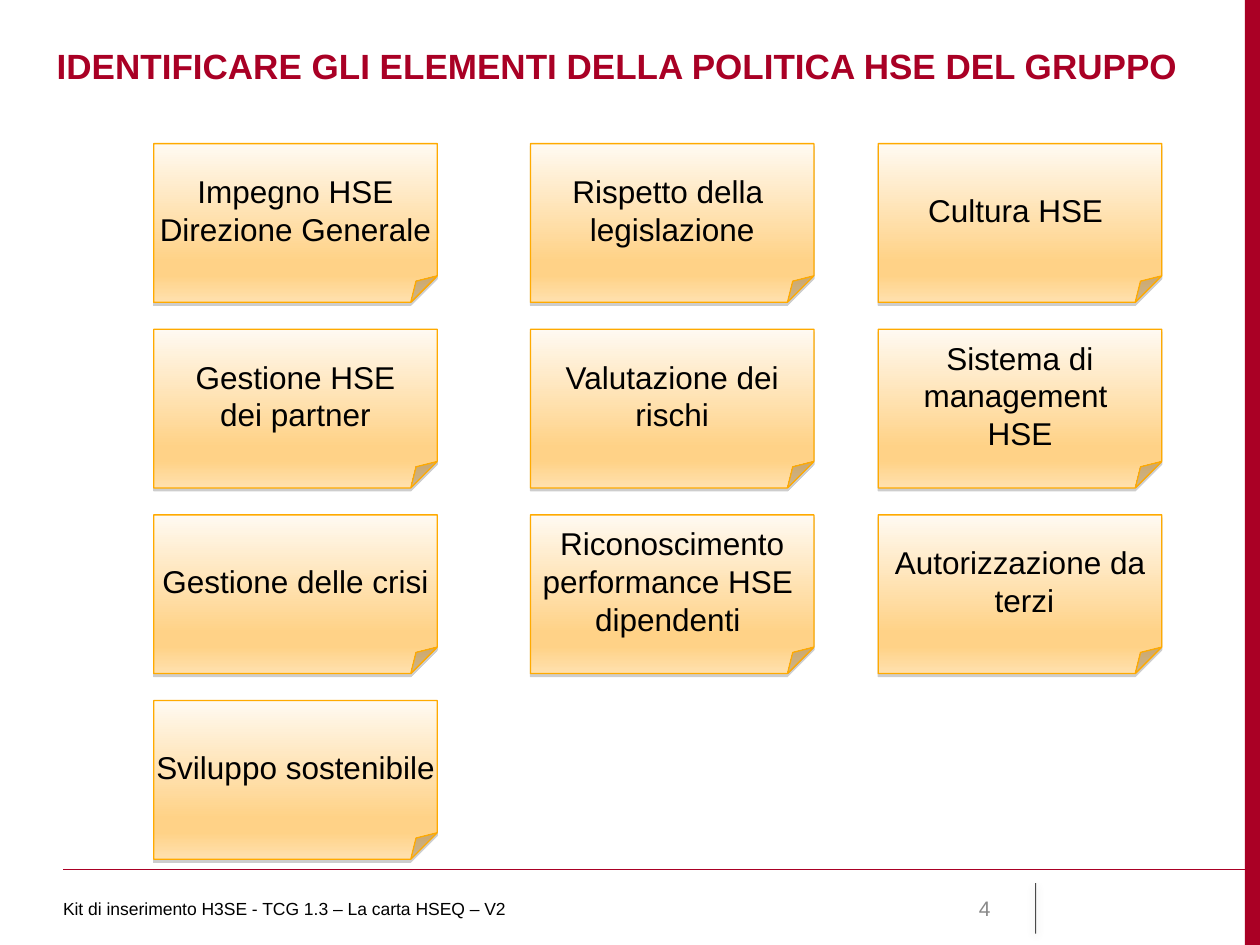
from dataclasses import dataclass

from lxml import etree
from pptx import Presentation
from pptx import util as u
from pptx.dml import color
from pptx.enum import shapes, text
from pptx.oxml import ns, parse_xml

COLORS = {
    "red": "AA0025",
    "title": "A90025",
    "amber": "FFAA00",
    "black": "000000",
    "grey": "898989",
    "shadow": "808080",
}
NOTE_GRADIENT = [(0, "FFFAF2"), (74, "FFD287"), (83, "FFD287"), (100, "FFE1AF")]
NOTE_WIDTH, NOTE_HEIGHT = 2.25, 1.26
COLUMN_LEFTS = [1.22, 4.21, 6.97]
FIRST_TOP, LAST_TOP = 1.14, 5.56
NOTE_TEXTS = [
    ["Impegno HSE\nDirezione Generale", "Rispetto della \vlegislazione", "Cultura HSE "],
    ["Gestione HSE\n dei partner ", "Valutazione dei rischi", "Sistema di management \nHSE"],
    ["Gestione delle crisi", "Riconoscimento performance HSE \ndipendenti ",
     "Autorizzazione da\v terzi"],
    ["Sviluppo sostenibile"],
]


@dataclass
class Note:
    left: float
    top: float
    label: str


@dataclass
class Rule:
    start: tuple[float, float]
    end: tuple[float, float]
    color: str
    width: float


@dataclass
class Caption:
    left: float
    width: float
    label: str
    size: int
    color: str
    align: text.PP_ALIGN
    inset: float


def rgb(name: str) -> color.RGBColor:
    return color.RGBColor.from_string(COLORS[name])


def format_text(frame, size: int, color_name: str, align: text.PP_ALIGN, bold: bool = False) -> None:
    for paragraph in frame.paragraphs:
        paragraph.alignment = align
        for run in paragraph.runs:
            run.font.name = "Arial"
            run.font.size = u.Pt(size)
            run.font.bold = bold
            run.font.color.rgb = rgb(color_name)


def add_shadow(effects, color_name: str, blur: float) -> None:
    effects.append(parse_xml(
        f'<a:outerShdw {ns.nsdecls("a")} blurRad="{u.Pt(blur)}" dist="{u.Pt(1.6)}" '
        f'dir="5400000" rotWithShape="0"><a:srgbClr val="{COLORS[color_name]}">'
        f'<a:alpha val="38000"/></a:srgbClr></a:outerShdw>'))


def fill_gradient(shape) -> None:
    shape.fill.gradient()
    shape.fill.gradient_angle = 270
    stops = shape._element.spPr.find(".//" + ns.qn("a:gsLst"))
    for stop in list(stops):
        stops.remove(stop)
    for position, value in NOTE_GRADIENT:
        stop = etree.SubElement(stops, ns.qn("a:gs"), pos=str(position * 1000))
        etree.SubElement(stop, ns.qn("a:srgbClr"), val=value)


def draw_note(slide, note: Note) -> None:
    shape = slide.shapes.add_shape(
        shapes.MSO_SHAPE.FOLDED_CORNER, u.Inches(note.left), u.Inches(note.top),
        u.Inches(NOTE_WIDTH), u.Inches(NOTE_HEIGHT))
    fill_gradient(shape)
    shape.line.color.rgb = rgb("amber")
    shape.line.width = u.Pt(0.75)
    shape.shadow.inherit = False
    add_shadow(shape._element.spPr.find(ns.qn("a:effectLst")), "shadow", 0)
    frame = shape.text_frame
    frame.margin_left = frame.margin_right = 0
    frame.margin_top = frame.margin_bottom = u.Inches(0.04)
    frame.vertical_anchor = text.MSO_ANCHOR.MIDDLE
    frame.word_wrap = True
    frame.text = note.label
    format_text(frame, 18, "black", text.PP_ALIGN.CENTER)


def draw_rule(slide, rule: Rule):
    line = slide.shapes.add_connector(
        shapes.MSO_CONNECTOR.STRAIGHT, *map(u.Inches, rule.start + rule.end))
    line.line.color.rgb = rgb(rule.color)
    line.line.width = u.Pt(rule.width)
    etree.SubElement(line._element.spPr, ns.qn("a:effectLst"))
    return line


def draw_separator(slide) -> None:
    line = draw_rule(slide, Rule((8.22, 7.01), (8.22, 7.41), "black", 0.5))
    properties = line._element.spPr
    line_color = properties.find(".//" + ns.qn("a:srgbClr"))
    etree.SubElement(line_color, ns.qn("a:alpha"), val="70000")
    add_shadow(properties.find(ns.qn("a:effectLst")), "black", 5)


def draw_caption(slide, caption: Caption) -> None:
    box = slide.shapes.add_textbox(
        u.Inches(caption.left), u.Inches(7.01), u.Inches(caption.width), u.Inches(0.4))
    frame = box.text_frame
    frame.word_wrap = True
    frame.margin_left = u.Inches(caption.inset)
    frame.vertical_anchor = text.MSO_ANCHOR.MIDDLE
    frame.text = caption.label
    format_text(frame, caption.size, caption.color, caption.align)


def draw_title(slide) -> None:
    title = slide.shapes.title
    title.left, title.top, title.width, title.height = map(u.Inches, (0.35, 0.3, 9.37, 0.69))
    frame = title.text_frame
    frame.vertical_anchor = text.MSO_ANCHOR.TOP
    frame.auto_size = text.MSO_AUTO_SIZE.NONE
    frame.text = "IDENTIFICARE GLI ELEMENTI DELLA POLITICA HSE DEL GRUPPO"
    format_text(frame, 20, "title", text.PP_ALIGN.LEFT, bold=True)


def draw_side_band(slide) -> None:
    band = slide.shapes.add_shape(
        shapes.MSO_SHAPE.RECTANGLE, u.Inches(9.88), 0, u.Inches(0.12), u.Inches(7.5))
    band.fill.solid()
    band.fill.fore_color.rgb = rgb("red")
    band.line.fill.background()
    band.shadow.inherit = False


def main() -> None:
    presentation = Presentation()
    presentation.slide_width, presentation.slide_height = u.Inches(10), u.Inches(7.5)
    slide = presentation.slides.add_slide(presentation.slide_layouts[5])
    draw_side_band(slide)
    draw_rule(slide, Rule((0.5, 6.9), (10, 6.9), "red", 0.75))
    draw_separator(slide)
    draw_title(slide)
    row_step = (LAST_TOP - FIRST_TOP) / (len(NOTE_TEXTS) - 1)
    for row, labels in enumerate(NOTE_TEXTS):
        for left, label in zip(COLUMN_LEFTS, labels):
            draw_note(slide, Note(left, FIRST_TOP + row * row_step, label))
    draw_caption(slide, Caption(7.17, 0.79, "4", 12, "grey", text.PP_ALIGN.RIGHT, 0.1))
    draw_caption(slide, Caption(
        0.5, 6.08, "Kit di inserimento H3SE - TCG 1.3 – La carta HSEQ – V2",
        10, "black", text.PP_ALIGN.LEFT, 0))
    presentation.save("out.pptx")


if __name__ == "__main__":
    main()
